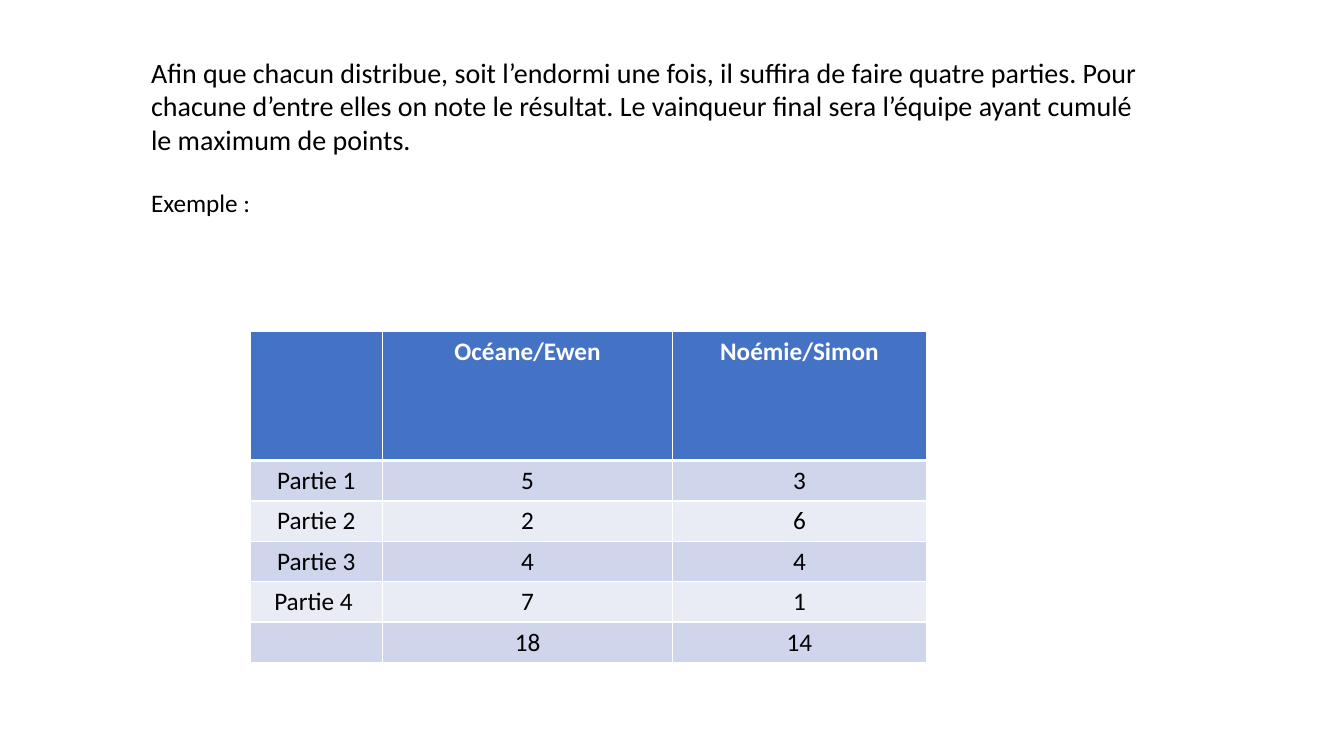
import pptx
import pptx.dml.color
import pptx.enum.text
import pptx.oxml
import pptx.oxml.ns
import pptx.util

Pt = pptx.util.Pt
INTRO = (
    "Afin que chacun distribue, soit l’endormi une fois, il suffira de faire "
    "quatre parties. Pour chacune d’entre elles on note le résultat. Le "
    "vainqueur final sera l’équipe ayant cumulé le maximum de points."
)
SCORES = [
    ("", "Océane/Ewen", "Noémie/Simon"),
    ("Partie 1", "5", "3"),
    ("Partie 2", "2", "6"),
    ("Partie 3", "4", "4"),
    ("Partie 4 ", "7", "1"),
    ("", "18", "14"),
]
WIDTHS = (94.3, 207.5, 181)
HEAD, ROW = 92.2, 28.8
BANDS = ("E9EBF5", "CFD5EA")


def color(code):
    return pptx.dml.color.RGBColor.from_string(code)


def style(para, size, code="000000", bold=False):
    for run in para.runs:
        font = run.font
        font.name = "Calibri"
        font.size = Pt(size)
        font.bold = bold
        font.color.rgb = color(code)


def add_text(slide, box, lines):
    frame = slide.shapes.add_textbox(*map(Pt, box)).text_frame
    frame.word_wrap = True
    frame.text = "\n".join(text for text, size, gap in lines)
    for para, (text, size, gap) in zip(frame.paragraphs, lines):
        para.space_before = Pt(gap)
        style(para, size)


def add_edge(cell, side, width):
    cell._tc.get_or_add_tcPr().append(pptx.oxml.parse_xml(
        f'<a:ln{side} {pptx.oxml.ns.nsdecls("a")} w="{Pt(width)}">'
        '<a:solidFill><a:srgbClr val="FFFFFF"/></a:solidFill>'
        f'</a:ln{side}>'
    ))


def fill_cell(cell, text, row):
    head = row == 0
    edges = {"L": 1, "R": 1, "T": 3 if row == 1 else 1, "B": 3 if head else 1}
    for side, width in edges.items():
        add_edge(cell, side, width)
    cell.fill.solid()
    cell.fill.fore_color.rgb = color("4472C4" if head else BANDS[row % 2])
    cell.text_frame.text = text
    para = cell.text_frame.paragraphs[0]
    para.alignment = pptx.enum.text.PP_ALIGN.CENTER
    para.font.size = Pt(18)
    style(para, 18, "FFFFFF" if head else "000000", head)


def add_scores(slide, left, top):
    high = HEAD + ROW * (len(SCORES) - 1)
    table = slide.shapes.add_table(
        len(SCORES), len(WIDTHS), Pt(left), Pt(top), Pt(sum(WIDTHS)), Pt(high)
    ).table
    for col, width in zip(table.columns, WIDTHS):
        col.width = Pt(width)
    for row, texts in enumerate(SCORES):
        table.rows[row].height = Pt(ROW if row else HEAD)
        for col, text in enumerate(texts):
            fill_cell(table.cell(row, col), text, row)


def main():
    """Build the slide with the rule and the table of scores."""
    deck = pptx.Presentation()
    deck.slide_width, deck.slide_height = Pt(960), Pt(540)
    slide = deck.slides.add_slide(deck.slide_layouts[6])
    add_text(slide, (100.8, 36, 721.4, 189.4),
             [(INTRO, 20, 0), ("Exemple :", 18, 22)])
    add_scores(slide, 178.8, 236.8)
    deck.save("out.pptx")


if __name__ == "__main__":
    main()
